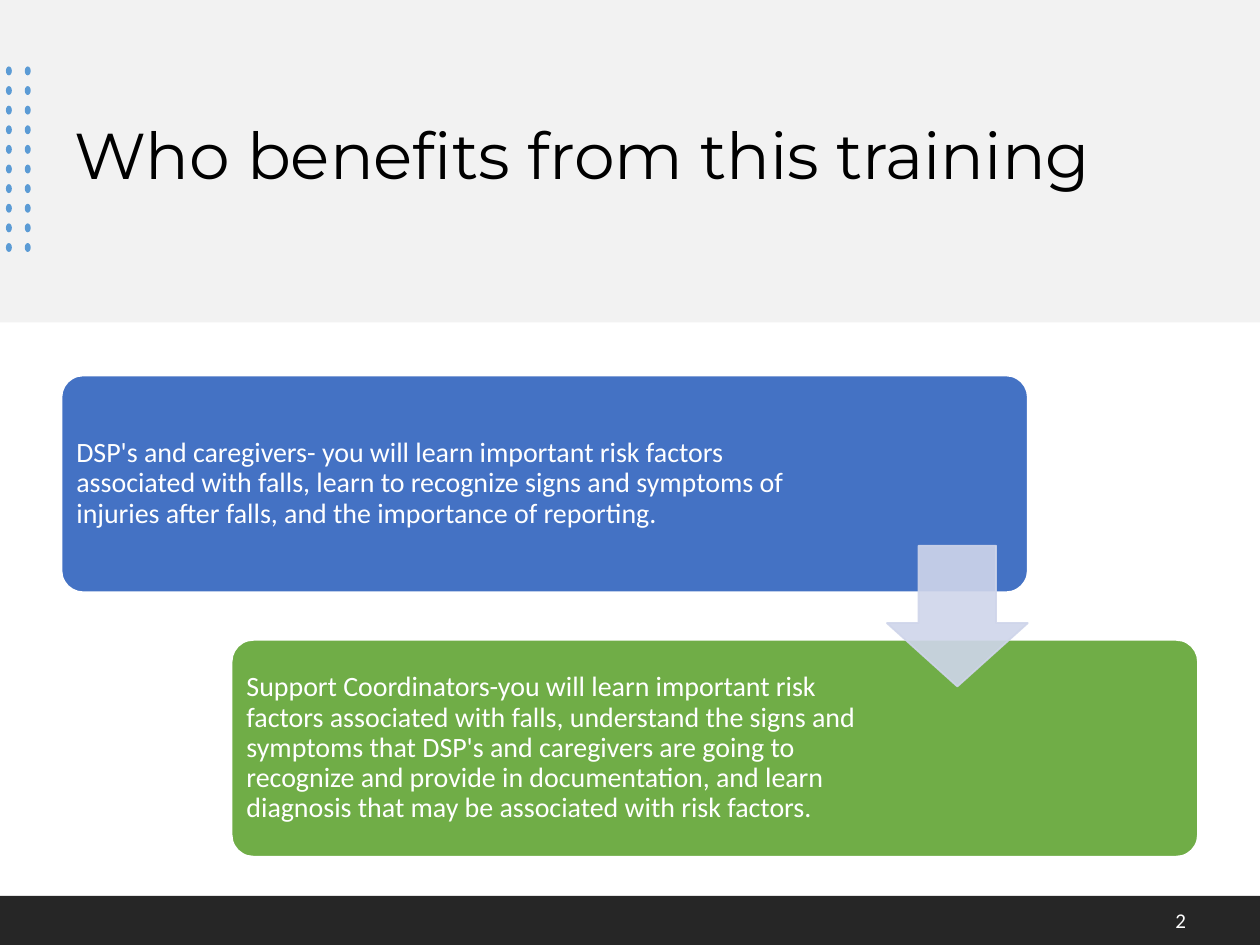
from lxml import etree
from pptx import Presentation
from pptx.dml.color import RGBColor
from pptx.enum import shapes, text
from pptx.oxml.ns import qn
from pptx.util import Cm, Pt

COLORS = {
    "header": "F2F2F2", "footer": "262626", "dot": "5B9BD5",
    "blue": "4472C4", "green": "70AD47", "arrow": "CFD5EA",
    "white": "FFFFFF", "black": "000000",
}
SHAPE = shapes.MSO_SHAPE


def add_block(kind, left, top, width, height, fill, line=None):
    shape = slide.shapes.add_shape(kind, Cm(left), Cm(top), Cm(width), Cm(height))
    shape.shadow.inherit = False
    shape.fill.solid()
    shape.fill.fore_color.rgb = RGBColor.from_string(COLORS[fill])
    if line:
        shape.line.color.rgb = RGBColor.from_string(COLORS[line])
        shape.line.width = Pt(1)
    else:
        shape.line.fill.background()
    return shape


def write_text(shape, content, size, color="white", font="Calibri",
               align=text.PP_ALIGN.LEFT, spacing=1.0, margin=None):
    frame = shape.text_frame
    frame.word_wrap = True
    frame.auto_size = text.MSO_AUTO_SIZE.NONE
    frame.vertical_anchor = text.MSO_ANCHOR.MIDDLE
    if margin is not None:
        frame.margin_left = frame.margin_right = Cm(margin)
        frame.margin_top = frame.margin_bottom = Cm(margin)
    frame.text = content
    paragraph = frame.paragraphs[0]
    paragraph.alignment = align
    paragraph.line_spacing = spacing
    paragraph.space_after = Pt(6)
    paragraph.font.size = Pt(size)
    paragraph.font.name = font
    paragraph.font.color.rgb = RGBColor.from_string(COLORS[color])


presentation = Presentation()
presentation.slide_width, presentation.slide_height = Cm(25.4), Cm(19.05)
slide = presentation.slides.add_slide(presentation.slide_layouts[5])

# Header band, with the title in front of it
header = add_block(SHAPE.RECTANGLE, 0, 0, 25.4, 6.5, "header")
title = slide.shapes.title
title.left, title.top, title.width, title.height = Cm(1.24), Cm(0.94), Cm(22.94), Cm(4.5)
write_text(title, "Who benefits from this training", 37, color="black",
           font="Montserrat", spacing=0.9)
header._element.addnext(title._element)

# Dot grid: 10 rows by 2 columns
for row in range(10):
    for column in range(2):
        add_block(SHAPE.OVAL, 0.12 + column * 0.38, 1.34 + row * 3.56 / 9,
                  0.12, 0.18, "dot")

# Footer band and page number
add_block(SHAPE.RECTANGLE, 0, 18.06, 25.4, 0.99, "footer")
number = slide.shapes.add_textbox(Cm(18.44), Cm(18.03), Cm(5.72), Cm(1.02))
write_text(number, "2", 12, align=text.PP_ALIGN.RIGHT)

# Staggered cards: left, top, text width, fill, text
cards = [
    (1.24, 7.57, 14.96, "blue",
     "DSP's and caregivers- you will learn important risk factors associated with "
     "falls, learn to recognize signs and symptoms of injuries after falls, and the "
     "importance of reporting.\u00a0"),
    (4.67, 12.9, 12.95, "green",
     "Support Coordinators-you will learn important risk factors associated with "
     "falls, understand the signs and symptoms that DSP's and caregivers are going to "
     "recognize and provide in documentation, and learn diagnosis that may be "
     "associated with risk factors."),
]
for left, top, text_width, fill, content in cards:
    card = add_block(SHAPE.ROUNDED_RECTANGLE, left, top, 19.48, 4.37, fill, line="white")
    card.adjustments[0] = 0.1
    label = slide.shapes.add_textbox(Cm(left + 0.13), Cm(top + 0.13),
                                     Cm(text_width), Cm(4.11))
    write_text(label, content, 16, spacing=0.9, margin=0.17)

# Translucent arrow from the first card to the second
arrow = add_block(SHAPE.DOWN_ARROW, 17.88, 11, 2.84, 2.84, "arrow", line="arrow")
arrow.adjustments[0], arrow.adjustments[1] = 0.55, 0.45
for color in arrow._element.spPr.iter(qn("a:srgbClr")):
    etree.SubElement(color, qn("a:alpha"), val="90000")

presentation.save("out.pptx")
